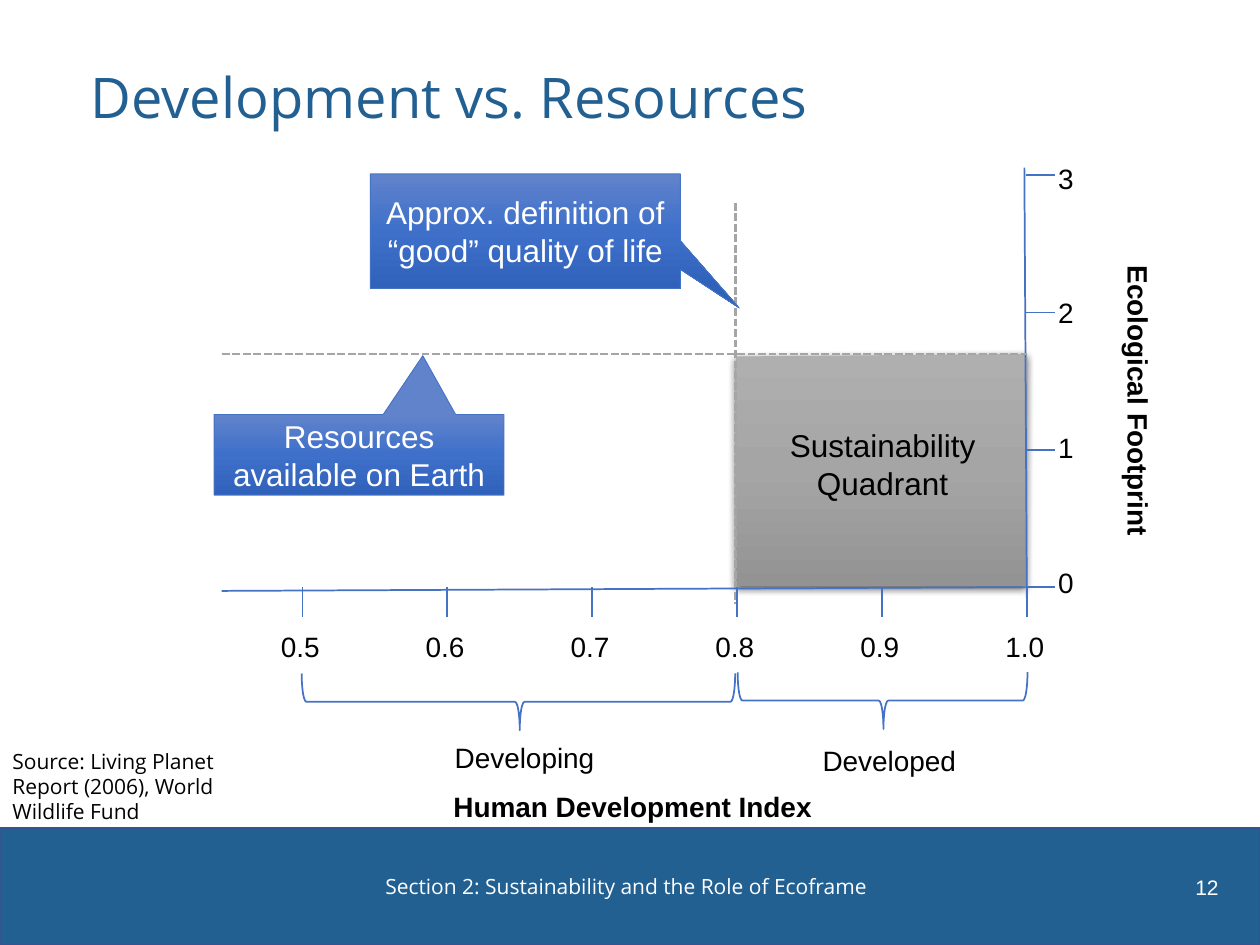
from copy import deepcopy

from pptx import Presentation
from pptx.dml.color import RGBColor
from pptx.enum.dml import MSO_LINE
from pptx.enum.shapes import MSO_CONNECTOR, MSO_SHAPE
from pptx.enum.text import MSO_ANCHOR, MSO_AUTO_SIZE, PP_ALIGN
from pptx.oxml import parse_xml
from pptx.oxml.ns import nsdecls, qn
from pptx.util import Inches, Pt

NAVY, BLUE, GRAY = "236092", "4472C4", "A5A5A5"
BLUE_STOPS = ("6183CB", "3E70CA", "3062BB")
GRAY_STOPS = ("AFAFAF", "A5A5A5", "939393")
AXIS = {"color": BLUE, "width": 1}
GUIDE = {"color": GRAY, "width": 1.5, "dash": MSO_LINE.SQUARE_DOT}
LABEL = {"size": Pt(16), "name": "Arial"}
HEADING = {**LABEL, "bold": True}
BODY = {"size": Pt(18), "name": "Arial"}
SMALL = {"size": Pt(12), "name": "Open Sans"}


def rgb(color):
    return RGBColor.from_string(color)


def box(*lengths):
    return [Inches(length) for length in lengths]


def write(tf, text, font, color="000000", align=PP_ALIGN.LEFT, spacing=None):
    p = tf.paragraphs[0]
    p.alignment = align
    if spacing:
        p.line_spacing = spacing
    r = p.add_run()
    r.text = text
    for key, value in font.items():
        setattr(r.font, key, value)
    r.font.color.rgb = rgb(color)


def add_text(s, at, text, font, wrap=False, grow=True, anchor=MSO_ANCHOR.TOP,
             rotation=0, **style):
    sp = s.shapes.add_textbox(*box(*at))
    sp.rotation = rotation
    tf = sp.text_frame
    tf.word_wrap = wrap
    tf.auto_size = MSO_AUTO_SIZE.SHAPE_TO_FIT_TEXT if grow else MSO_AUTO_SIZE.NONE
    tf.vertical_anchor = anchor
    write(tf, text, font, **style)


def add_line(s, start, end, color, width, dash=None):
    c = s.shapes.add_connector(MSO_CONNECTOR.STRAIGHT, *box(*start, *end))
    c.line.color.rgb = rgb(color)
    c.line.width = Pt(width)
    if dash:
        c.line.dash_style = dash
    c._element.spPr.append(parse_xml(f"<a:effectLst {nsdecls('a')}/>"))


def add_shape(s, kind, at, line, width, adjustments=()):
    sp = s.shapes.add_shape(kind, *box(*at))
    sp.shadow.inherit = False
    sp.line.color.rgb = rgb(line)
    sp.line.width = Pt(width)
    for i, value in enumerate(adjustments):
        sp.adjustments[i] = value
    return sp


def fill_gradient(sp, colors):
    sp.fill.gradient()
    sp.fill.gradient_angle = 270
    stops = sp._element.spPr.find(qn("a:gradFill")).find(qn("a:gsLst"))
    stops.insert(1, deepcopy(stops[0]))
    for i, (stop, color) in enumerate(zip(sp.fill.gradient_stops, colors)):
        stop.position = i / 2
        stop.color.rgb = rgb(color)


def add_callout(s, at, pointer, text):
    sp = add_shape(s, MSO_SHAPE.RECTANGULAR_CALLOUT, at, BLUE, 0.5, pointer)
    fill_gradient(sp, BLUE_STOPS)
    tf = sp.text_frame
    tf.word_wrap = True
    tf.vertical_anchor = MSO_ANCHOR.MIDDLE
    write(tf, text, BODY, "FFFFFF", PP_ALIGN.CENTER)


def add_brace(s, at):
    sp = add_shape(s, MSO_SHAPE.LEFT_BRACE, at, BLUE, 1, (0.083, 0.503))
    sp.fill.background()
    sp.rotation = 270


def add_quadrant(s):
    points = [(8.15, 2.81), (8.14, 4.65), (5.84, 4.65)]
    builder = s.shapes.build_freeform(Inches(5.84), Inches(2.83))
    builder.add_line_segments([box(*point) for point in points])
    sp = builder.convert_to_shape()
    sp.shadow.inherit = False
    fill_gradient(sp, GRAY_STOPS)
    sp.line.fill.background()
    sp._element.spPr.find(qn("a:effectLst")).append(parse_xml(
        f'<a:outerShdw {nsdecls("a")} blurRad="57150" dist="19050" dir="5400000" '
        'algn="ctr" rotWithShape="0"><a:srgbClr val="000000">'
        '<a:alpha val="63000"/></a:srgbClr></a:outerShdw>'))


def add_axes(s):
    add_line(s, (8.13, 1.33), (8.15, 4.79), **AXIS)
    add_line(s, (5.84, 1.61), (5.84, 4.79), **GUIDE)
    add_line(s, (1.76, 4.69), (8.14, 4.66), **AXIS)
    add_line(s, (1.76, 2.81), (8.15, 2.81), **GUIDE)
    for i in range(6):
        x = 2.4 + 1.15 * i
        add_line(s, (x, 4.66), (x, 4.9), **AXIS)
        add_text(s, (x - 0.27, 4.95, 0.51, 0.37), f"{(5 + i) / 10:.1f}", LABEL)
    for i in range(4):
        y = 4.66 - 1.09 * i
        add_line(s, (8.14, y), (8.37, y), **AXIS)
        add_text(s, (8.3, 4.44 - 1.07 * i, 0.33, 0.37), str(i), LABEL)
    add_text(s, (3.5, 6.22, 3.08, 0.37), "Human Development Index", HEADING)
    add_text(s, (7.85, 3.01, 2.37, 0.37), "Ecological Footprint", HEADING, rotation=90)


def add_title(s, text):
    sp = s.shapes.title
    sp.left, sp.top, sp.width, sp.height = box(0.62, 0.42, 8.75, 0.75)
    tf = sp.text_frame
    tf.auto_size = MSO_AUTO_SIZE.NONE
    tf.vertical_anchor = MSO_ANCHOR.MIDDLE
    write(tf, text, {"size": Pt(32), "name": "Open Sans"}, NAVY, spacing=0.9)


def add_footer(s):
    band = add_shape(s, MSO_SHAPE.RECTANGLE, (0, 6.57, 10, 0.93), "325491", 1)
    band.fill.solid()
    band.fill.fore_color.rgb = rgb(NAVY)
    add_text(s, (2.96, 6.84, 4.07, 0.4),
             "Section 2: Sustainability and the Role of Ecoframe", SMALL,
             wrap=True, grow=False, color="FFFFFF", spacing=1.2)
    add_text(s, (8.62, 6.84, 1.15, 0.4), "12", {**SMALL, "name": "Arial"},
             wrap=True, grow=False, anchor=MSO_ANCHOR.MIDDLE,
             color="FFFFFF", align=PP_ALIGN.RIGHT)


def main():
    prs = Presentation()
    prs.slide_width, prs.slide_height = box(10, 7.5)
    s = prs.slides.add_slide(prs.slide_layouts[5])
    add_title(s, "Development vs. Resources")
    add_footer(s)
    add_quadrant(s)
    add_axes(s)
    add_text(s, (5.95, 3.33, 2.11, 0.71), "Sustainability Quadrant", BODY,
             wrap=True, align=PP_ALIGN.CENTER)
    add_brace(s, (6.78, 4.41, 0.45, 2.3))
    add_brace(s, (3.89, 3.85, 0.45, 3.44))
    add_text(s, (3.51, 5.83, 1.32, 0.37), "Developing", LABEL)
    add_text(s, (6.43, 5.85, 1.27, 0.37), "Developed", LABEL)
    add_callout(s, (1.7, 3.29, 2.3, 0.64), (0.22, -1.23),
                "Resources available on Earth")
    add_callout(s, (2.94, 1.38, 2.46, 0.91), (0.69, 0.67),
                "Approx. definition of “good” quality of life")
    add_text(s, (0, 5.89, 1.98, 0.71),
             "Source: Living Planet Report (2006), World Wildlife Fund", SMALL, wrap=True)
    prs.save("out.pptx")


if __name__ == "__main__":
    main()
